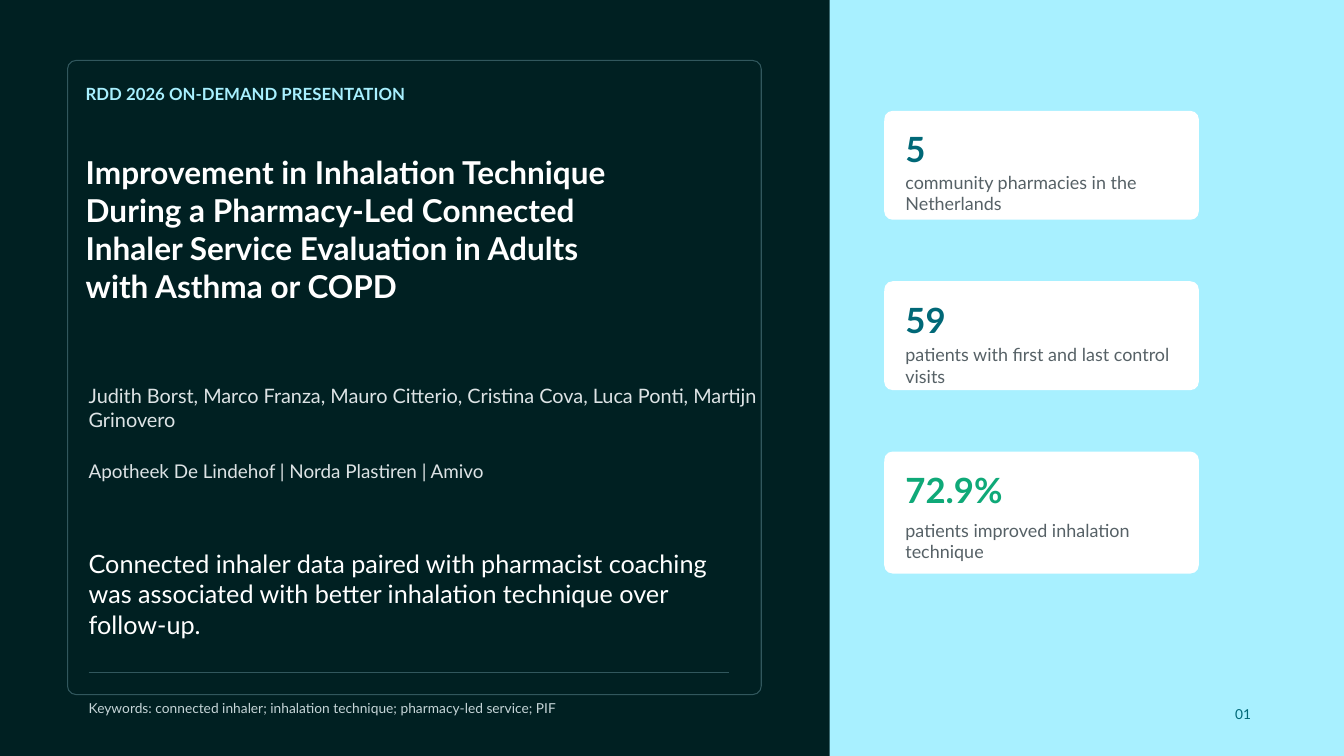
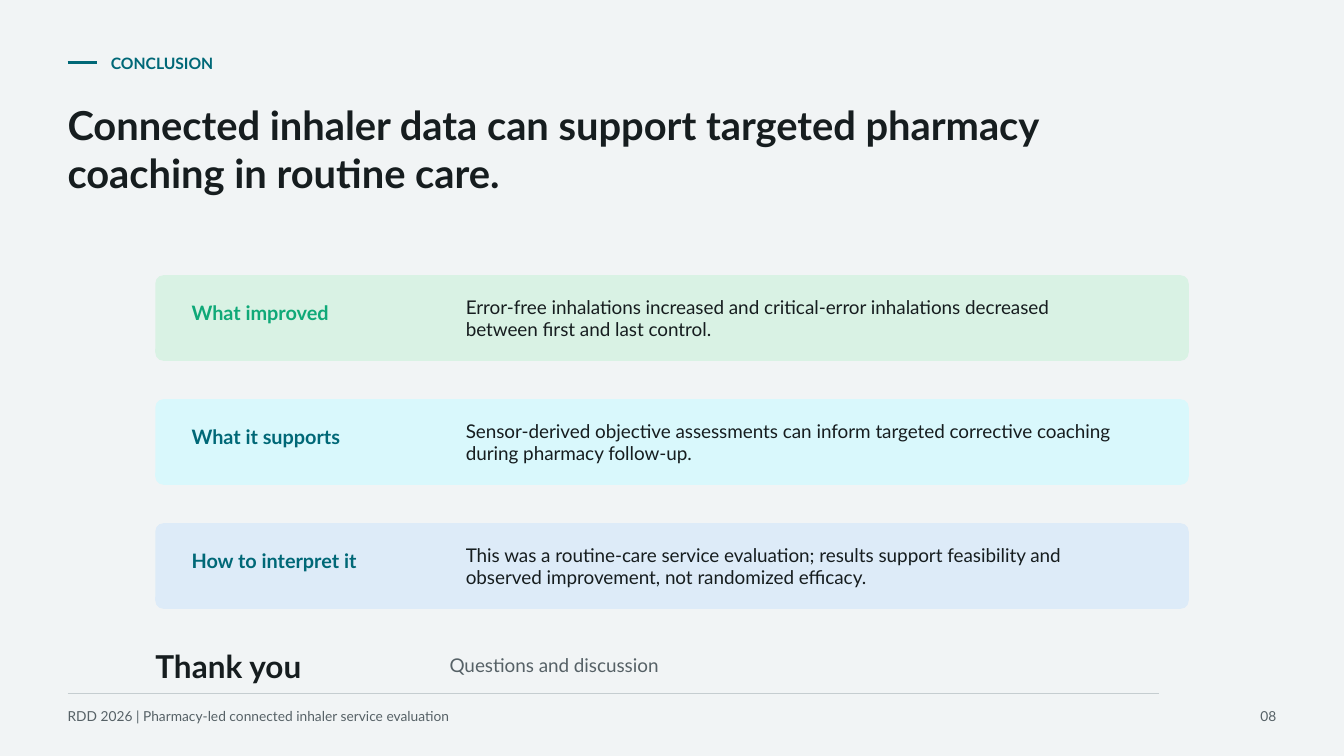
from dataclasses import dataclass

from lxml import etree
from pptx import Presentation
from pptx.dml.color import RGBColor
from pptx.enum.shapes import MSO_CONNECTOR, MSO_SHAPE
from pptx.enum.text import MSO_ANCHOR, MSO_AUTO_SIZE, PP_ALIGN
from pptx.oxml.ns import qn
from pptx.util import Inches, Pt

RECT, ROUND = MSO_SHAPE.RECTANGLE, MSO_SHAPE.ROUNDED_RECTANGLE
LINE = MSO_CONNECTOR.STRAIGHT
LEFT, RIGHT = PP_ALIGN.LEFT, PP_ALIGN.RIGHT
TOP, MIDDLE = MSO_ANCHOR.TOP, MSO_ANCHOR.MIDDLE


@dataclass(frozen=True)
class Theme:
    font: str = "Lato"
    # Colours
    page: str = "F1F4F5"
    dark: str = "002022"
    aqua: str = "A8F0FF"
    edge: str = "31575D"
    white: str = "FFFFFF"
    ink: str = "161D1F"
    grey: str = "566166"
    pale: str = "DDE3E5"
    mist: str = "C6D5D8"
    rule: str = "C5CDD0"
    teal: str = "006877"
    green: str = "0FA978"
    mint: str = "D9F2E4"
    ice: str = "D9F8FC"
    sky: str = "DDEBF8"
    # Type sizes
    title: float = 28.5
    stat: float = 24.8
    head: float = 22.5
    lead: float = 18
    label: float = 14.2
    body: float = 13.5
    note: float = 12.8
    tag: float = 12
    kicker: float = 11.2
    small: float = 9.8


T = Theme()
WIDE, HIGH = 13.33, 7.5
EDGE = 0.67
RADIUS = 0.083

# Cover content
COVER = {
    "tag": "RDD 2026 ON-DEMAND PRESENTATION",
    "title": [
        "Improvement in Inhalation Technique",
        "During a Pharmacy-Led Connected",
        "Inhaler Service Evaluation in Adults",
        "with Asthma or COPD",
    ],
    "names": "Judith Borst, Marco Franza, Mauro Citterio, Cristina Cova, "
             "Luca Ponti, Martijn Grinovero",
    "groups": "Apotheek De Lindehof | Norda Plastiren | Amivo",
    "lead": "Connected inhaler data paired with pharmacist coaching was "
            "associated with better inhalation technique over follow-up.",
    "keys": "Keywords: connected inhaler; inhalation technique; "
            "pharmacy-led service; PIF",
    "page": "01",
}
# Figure, caption, figure colour, card height, caption offset
STATS = [
    ("5", "community pharmacies in the Netherlands", T.teal, 1.08, 0.6),
    ("59", "patients with first and last control visits", T.teal, 1.08, 0.62),
    ("72.9%", "patients improved inhalation technique", T.green, 1.21, 0.67),
]

# Conclusion content
CLOSE = {
    "kicker": "CONCLUSION",
    "title": ["Connected inhaler data can support targeted pharmacy "
              "coaching in routine care."],
    "thanks": "Thank you",
    "talk": "Questions and discussion",
    "foot": "RDD 2026 | Pharmacy-led connected inhaler service evaluation",
    "page": "08",
}
# Label, text, label colour, band fill
POINTS = [
    ("What improved",
     "Error-free inhalations increased and critical-error inhalations "
     "decreased between first and last control.", T.green, T.mint),
    ("What it supports",
     "Sensor-derived objective assessments can inform targeted corrective "
     "coaching during pharmacy follow-up.", T.teal, T.ice),
    ("How to interpret it",
     "This was a routine-care service evaluation; results support "
     "feasibility and observed improvement, not randomized efficacy.",
     T.teal, T.sky),
]


def rgb(code):
    return RGBColor.from_string(code)


def write(shape, lines, size, color, bold=False, align=LEFT, anchor=TOP):
    frame = shape.text_frame
    frame.word_wrap = True
    frame.auto_size = MSO_AUTO_SIZE.NONE
    frame.vertical_anchor = anchor
    frame.margin_left = frame.margin_right = 0
    frame.margin_top = frame.margin_bottom = 0
    frame.text = "\n".join(lines)
    for para in frame.paragraphs:
        para.alignment = align
        font = para.font
        font.name, font.size, font.bold = T.font, Pt(size), bold
        font.color.rgb = rgb(color)


def text(slide, at, words, size, color, **style):
    box = slide.shapes.add_textbox(*map(Inches, at))
    write(box, [words], size, color, **style)


def panel(slide, at, fill=None, line=None, kind=ROUND):
    shape = slide.shapes.add_shape(kind, *map(Inches, at))
    shape.shadow.inherit = False
    if kind == ROUND:
        shape.adjustments[0] = RADIUS / min(at[2:])
    if fill:
        shape.fill.solid()
        shape.fill.fore_color.rgb = rgb(fill)
    else:
        shape.fill.background()
    if line:
        shape.line.color.rgb = rgb(line)
        shape.line.width = Pt(0.75)
    else:
        shape.line.fill.background()


def rule(slide, left, top, width, color, weight=0.75):
    line = slide.shapes.add_connector(
        LINE, Inches(left), Inches(top), Inches(left + width), Inches(top))
    line.line.color.rgb = rgb(color)
    line.line.width = Pt(weight)
    etree.SubElement(line._element.spPr, qn("a:effectLst"))


def start(deck, back, lines, at, size, color):
    """Add a title-only slide with its background and title."""
    slide = deck.slides.add_slide(deck.slide_layouts[5])
    slide.background.fill.solid()
    slide.background.fill.fore_color.rgb = rgb(back)
    title = slide.shapes.title
    title.left, title.top, title.width, title.height = map(Inches, at)
    write(title, lines, size, color, bold=True)
    return slide


def number(slide, left, top, words, color):
    text(slide, (left, top, 0.58, 0.23), words, T.small, color, align=RIGHT)


def cover(deck):
    slide = start(deck, T.dark, COVER["title"], (0.85, 1.52, 6.77, 1.85),
                  T.head, T.white)
    split = 8.23
    panel(slide, (split, 0, WIDE - split, HIGH), T.aqua, kind=RECT)
    panel(slide, (EDGE, 0.6, 6.88, 6.29), line=T.edge)

    # Left column
    left = 0.88
    text(slide, (0.85, 0.83, 5.83, 0.29), COVER["tag"], T.tag, T.aqua,
         bold=True)
    text(slide, (left, 3.81, 6.67, 0.46), COVER["names"], T.label, T.pale)
    text(slide, (left, 4.56, 6.67, 0.29), COVER["groups"], T.body, T.pale)
    text(slide, (left, 5.44, 6.5, 0.77), COVER["lead"], T.lead, T.white)
    rule(slide, left, 6.67, 6.35, T.edge)
    text(slide, (left, 6.94, 6.46, 0.21), COVER["keys"], T.small, T.mist)

    # Stat cards
    left, first, step, width, pad = 8.77, 1.1, 1.69, 3.12, 0.21
    inner = width - 2 * pad
    for i, (figure, caption, color, height, drop) in enumerate(STATS):
        top = first + i * step
        panel(slide, (left, top, width, height), T.white)
        text(slide, (left + pad, top + 0.17, inner, 0.46), figure, T.stat,
             color, bold=True)
        text(slide, (left + pad, top + drop, inner, 0.42), caption, T.note,
             T.grey)
    number(slide, 11.83, 7, COVER["page"], T.teal)


def close(deck):
    slide = start(deck, T.page, CLOSE["title"], (EDGE, 1, 9.79, 1.08),
                  T.title, T.ink)

    # Kicker
    rule(slide, EDGE, 0.62, 0.29, T.teal, 1.5)
    text(slide, (1.1, 0.5, 4.48, 0.25), CLOSE["kicker"], T.kicker, T.teal,
         bold=True, anchor=MIDDLE)

    # Bands
    left, first, step = 1.54, 2.73, 1.23
    for i, (label, words, color, fill) in enumerate(POINTS):
        top = first + i * step
        panel(slide, (left, top, 10.25, 0.85), fill)
        text(slide, (left + 0.36, top + 0.25, 2.38, 0.29), label, T.label,
             color, bold=True)
        text(slide, (left + 3.08, top + 0.2, 6.44, 0.44), words, T.body,
             T.ink)

    # Thanks
    text(slide, (left, 6.42, 2.29, 0.38), CLOSE["thanks"], T.head, T.ink,
         bold=True)
    text(slide, (4.46, 6.48, 3.44, 0.25), CLOSE["talk"], T.body, T.grey)

    # Footer
    rule(slide, EDGE, 6.88, 10.83, T.rule)
    text(slide, (EDGE, 7.02, 7.92, 0.23), CLOSE["foot"], T.small, T.grey)
    number(slide, 12.08, 7.02, CLOSE["page"], T.grey)


def main():
    deck = Presentation()
    deck.slide_width, deck.slide_height = Inches(WIDE), Inches(HIGH)
    cover(deck)
    close(deck)
    deck.save("out.pptx")


if __name__ == "__main__":
    main()
